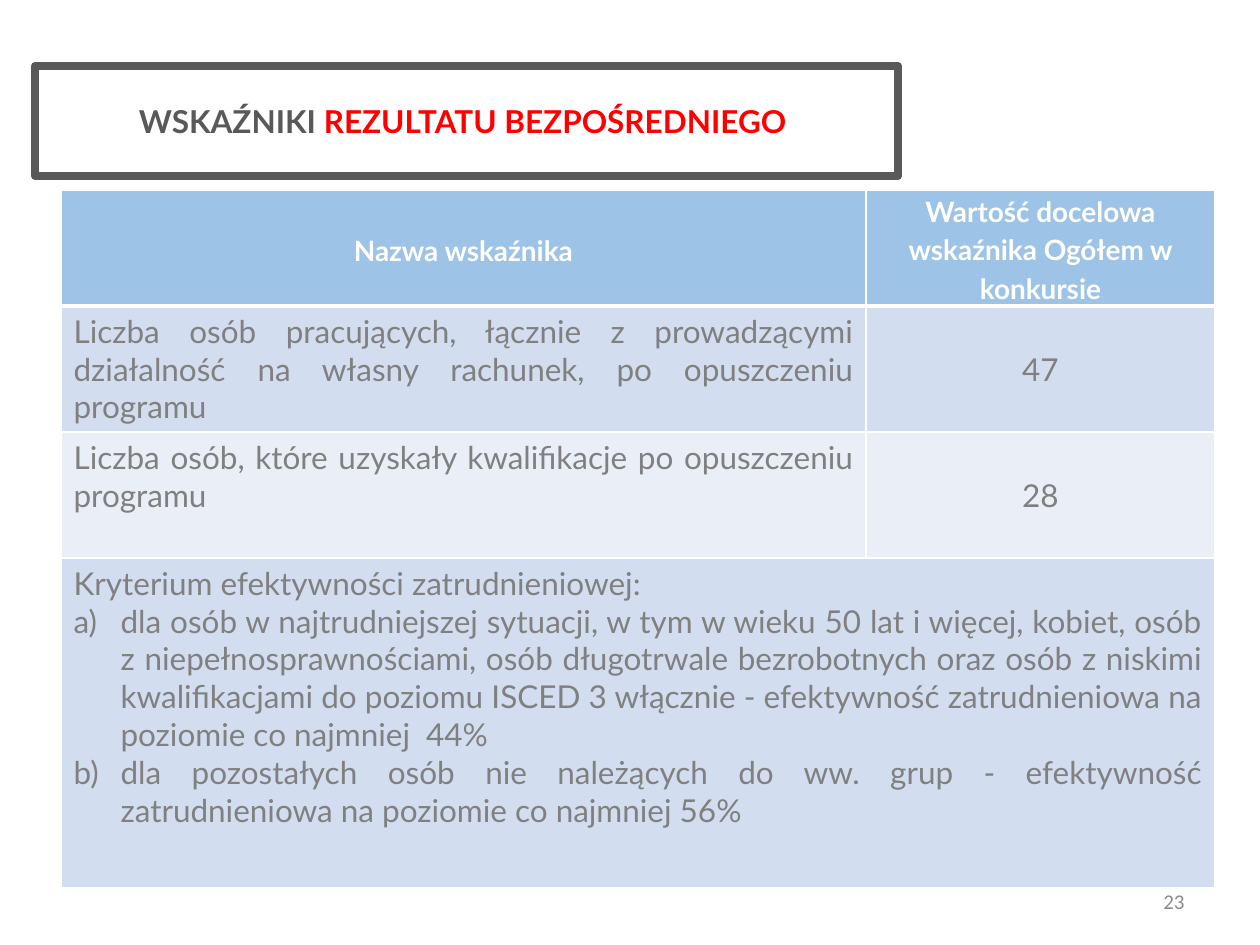
from dataclasses import dataclass

from pptx import Presentation
from pptx.dml.color import RGBColor
from pptx.enum.text import MSO_ANCHOR as Anchor, PP_ALIGN as Align
from pptx.oxml import parse_xml
from pptx.oxml.ns import nsdecls
from pptx.util import Emu, Pt

EMU_PER_PX = 914400 / 126


@dataclass(frozen=True)
class Theme:
    font: str = "Lato"
    number_font: str = "Calibri"
    dark: str = "595959"
    accent: str = "FF0000"
    body: str = "808080"
    number: str = "8C8C8C"
    white: str = "FFFFFF"
    header_fill: str = "9DC3E6"
    odd_fill: str = "D2DEEF"
    even_fill: str = "EAEFF7"
    body_size: int = 18
    header_size: int = 16
    number_size: int = 12
    frame_width: float = 4.5
    border_width: int = 1
    header_border_width: int = 3


def px(length):
    return Emu(round(length * EMU_PER_PX))


def apply(target, values):
    for name, value in values.items():
        setattr(target, name, value)


class SlideBuilder:
    def __init__(self, slide, theme):
        self.slide = slide
        self.theme = theme

    def add_runs(self, paragraph, runs, font, paragraph_format):
        """Fill a paragraph with (text, colour) runs sharing one font."""
        apply(paragraph, paragraph_format)
        for text, color in runs:
            run = paragraph.add_run()
            run.text = text
            apply(run.font, font)
            run.font.color.rgb = RGBColor.from_string(color)

    def title(self, box, runs):
        title = self.slide.shapes.title
        apply(title, dict(zip(("left", "top", "width", "height"), map(px, box))))
        title.fill.background()
        title.line.color.rgb = RGBColor.from_string(self.theme.dark)
        title.line.width = Pt(self.theme.frame_width)
        apply(title.text_frame, {"vertical_anchor": Anchor.MIDDLE, "word_wrap": True})
        font = {"name": self.theme.font, "size": Pt(self.theme.body_size), "bold": True}
        self.add_runs(title.text_frame.paragraphs[0], runs, font, {"alignment": Align.CENTER})

    def page_number(self, box, text):
        frame = self.slide.shapes.add_textbox(*map(px, box)).text_frame
        apply(frame, {"vertical_anchor": Anchor.MIDDLE, "word_wrap": True})
        font = {"name": self.theme.number_font, "size": Pt(self.theme.number_size)}
        self.add_runs(frame.paragraphs[0], [(text, self.theme.number)], font,
                      {"alignment": Align.RIGHT})

    def table(self, left, top, columns, rows):
        shape = self.slide.shapes.add_table(
            len(rows), len(columns), px(left), px(top), px(sum(columns)), px(sum(rows)))
        table = shape.table
        for column, width in zip(table.columns, columns):
            column.width = px(width)
        for row, height in zip(table.rows, rows):
            row.height = px(height)
        for index, row in enumerate(table.rows):
            for cell in row.cells:
                self.cell_style(cell, index)
        return table

    def cell_style(self, cell, row_index):
        theme = self.theme
        properties = cell._tc.get_or_add_tcPr()
        for side in "LRTB":
            thick = (row_index, side) in ((0, "B"), (1, "T"))
            width = theme.header_border_width if thick else theme.border_width
            properties.append(parse_xml(
                f'<a:ln{side} {nsdecls("a")} w="{Pt(width)}"><a:solidFill>'
                f'<a:srgbClr val="{theme.white}"/></a:solidFill></a:ln{side}>'))
        body_fill = theme.odd_fill if row_index % 2 else theme.even_fill
        cell.fill.solid()
        cell.fill.fore_color.rgb = RGBColor.from_string(
            body_fill if row_index else theme.header_fill)

    def header_cell(self, cell, text, anchor):
        apply(cell, {"margin_left": px(9), "margin_right": px(9), "margin_top": 0,
                     "margin_bottom": 0, "vertical_anchor": anchor})
        font = {"name": self.theme.font, "size": Pt(self.theme.header_size), "bold": True}
        self.add_runs(cell.text_frame.paragraphs[0], [(text, self.theme.white)], font,
                      {"alignment": Align.CENTER, "line_spacing": 1.15})

    def body_cell(self, cell, text, alignment=Align.JUSTIFY, anchor=Anchor.TOP):
        cell.vertical_anchor = anchor
        self.body_paragraph(cell.text_frame.paragraphs[0], text, alignment)

    def body_paragraph(self, paragraph, text, alignment=Align.JUSTIFY):
        font = {"name": self.theme.font, "size": Pt(self.theme.body_size), "bold": False}
        self.add_runs(paragraph, [(text, self.theme.body)], font, {"alignment": alignment})

    def lettered_list(self, cell, items):
        for text in items:
            paragraph = cell.text_frame.add_paragraph()
            properties = paragraph._p.get_or_add_pPr()
            indent = px(47)
            properties.set("marL", str(indent))
            properties.set("indent", str(-indent))
            properties.append(parse_xml(
                f'<a:buAutoNum {nsdecls("a")} type="alphaLcParenR"/>'))
            self.body_paragraph(paragraph, text)


INDICATORS = [
    ("Liczba osób pracujących, łącznie z prowadzącymi działalność na własny rachunek, "
     "po opuszczeniu programu", "47"),
    ("Liczba osób, które uzyskały kwalifikacje po opuszczeniu programu", "28"),
]
CRITERIA = [
    "dla osób w najtrudniejszej sytuacji, w tym w wieku 50 lat i więcej, kobiet, osób "
    "z niepełnosprawnościami, osób długotrwale bezrobotnych oraz osób z niskimi "
    "kwalifikacjami do poziomu ISCED 3 włącznie - efektywność zatrudnieniowa na "
    "poziomie co najmniej  44%",
    "dla pozostałych osób nie należących do ww. grup - efektywność zatrudnieniowa na "
    "poziomie co najmniej 56%",
]


def main():
    presentation = Presentation()
    apply(presentation, {"slide_width": px(1260), "slide_height": px(945)})
    theme = Theme()
    slide = presentation.slides.add_slide(presentation.slide_layouts.get_by_name("Title Only"))
    builder = SlideBuilder(slide, theme)

    builder.page_number((903, 876, 294, 50), "23")
    builder.title((35, 66, 863, 110), [("WSKAŹNIKI ", theme.dark),
                                       ("REZULTATU BEZPOŚREDNIEGO ", theme.accent)])

    table = builder.table(61, 190, columns=(805, 349), rows=(115, 126, 126, 330))
    builder.header_cell(table.cell(0, 0), "Nazwa wskaźnika", Anchor.MIDDLE)
    builder.header_cell(table.cell(0, 1), "Wartość docelowa wskaźnika Ogółem w konkursie",
                        Anchor.TOP)
    for row, (name, value) in enumerate(INDICATORS, start=1):
        builder.body_cell(table.cell(row, 0), name)
        builder.body_cell(table.cell(row, 1), value, Align.CENTER, Anchor.MIDDLE)

    criteria_cell = table.cell(3, 0)
    criteria_cell.merge(table.cell(3, 1))
    builder.body_cell(criteria_cell, "Kryterium efektywności zatrudnieniowej:")
    builder.lettered_list(criteria_cell, CRITERIA)

    presentation.save("out.pptx")


if __name__ == "__main__":
    main()
